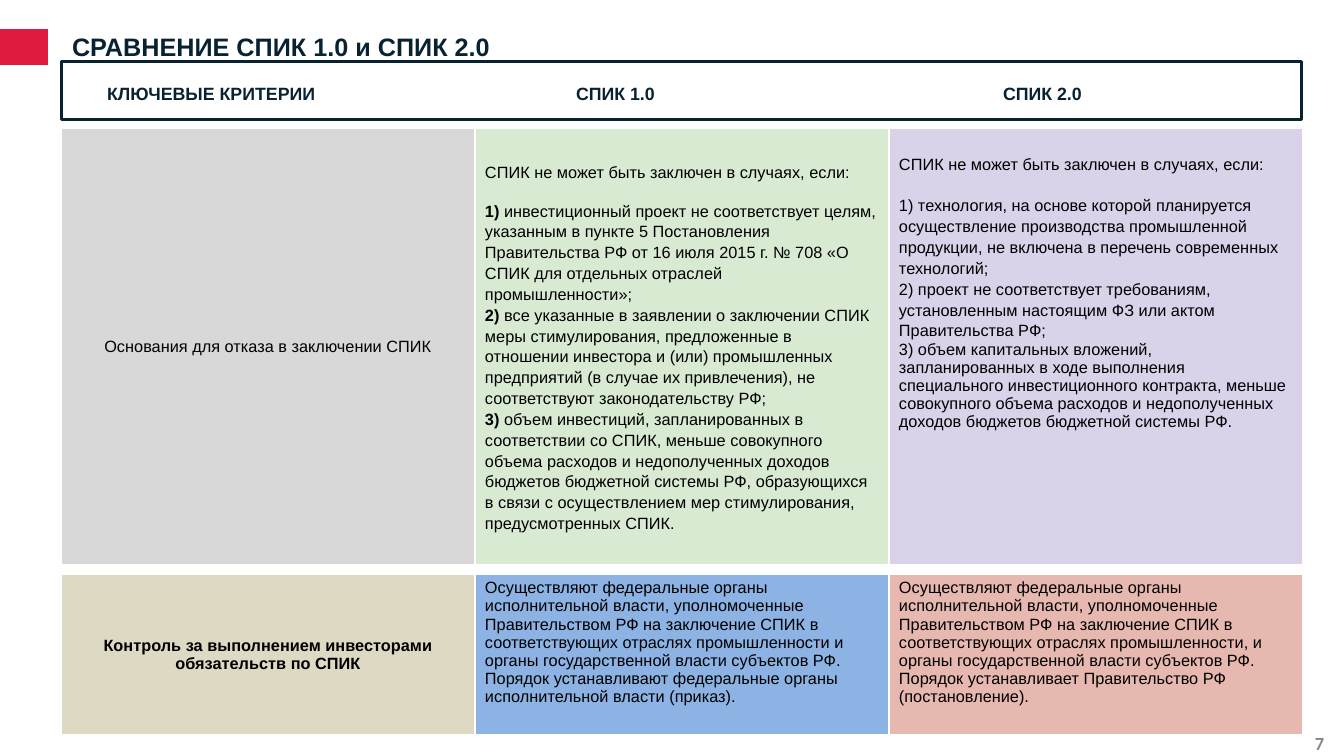
from lxml import etree
from pptx import Presentation
from pptx.dml.color import RGBColor
from pptx.enum.shapes import MSO_SHAPE
from pptx.enum.text import MSO_ANCHOR, MSO_AUTO_SIZE, PP_ALIGN
from pptx.oxml.ns import qn
from pptx.util import Pt

RECTANGLE = MSO_SHAPE.RECTANGLE
TOP, MIDDLE = MSO_ANCHOR.TOP, MSO_ANCHOR.MIDDLE
LEFT, CENTER = PP_ALIGN.LEFT, PP_ALIGN.CENTER
NO_AUTOFIT = MSO_AUTO_SIZE.NONE

PX = 8572.5  # EMU in one px
TITLE_ONLY = 5
TABLE_LEFT, COLUMN_WIDTH = 61, 414

COLORS = {
    "navy": "092231", "red": "DF1C40", "number": "888888",
    "black": "000000", "white": "FFFFFF",
    "gray": "D8D8D8", "green": "D9EAD3", "violet": "D9D2E9",
    "sand": "DDD9C3", "blue": "8CB3E3", "rose": "E6B8AF",
}
TITLE_FONT = {"name": "Arial", "size": Pt(17), "bold": True}
HEADER_FONT = {"name": "Arial", "size": Pt(12), "bold": True}
NUMBER_FONT = {"name": "Calibri", "size": Pt(12.5), "bold": True}
BODY_FONT = {"name": "Arial", "size": Pt(11), "bold": False}
LOOSE = {"line_spacing": 1.15}
LOOSE_GAP = {"line_spacing": 1.15, "space_before": Pt(12)}
CENTERED = {"alignment": CENTER}

# A paragraph is (format, bold start, plain text)
REFUSAL_CELLS = [
    {"fill": "gray", "anchor": MIDDLE, "paragraphs": [
        (CENTERED, "", "Основания для отказа в заключении СПИК")]},
    {"fill": "green", "anchor": MIDDLE, "paragraphs": [
        (LOOSE_GAP, "", "СПИК не может быть заключен в случаях, если:"),
        (LOOSE_GAP, "1) ", "инвестиционный проект не соответствует целям, "
         "указанным в пункте 5 Постановления"),
        (LOOSE, "", "Правительства РФ от 16 июля 2015 г. № 708 «О СПИК для "
         "отдельных отраслей"),
        (LOOSE, "", "промышленности»;"),
        (LOOSE, "2) ", "все указанные в заявлении о заключении СПИК меры "
         "стимулирования, предложенные в отношении инвестора и (или) "
         "промышленных предприятий (в случае их привлечения), не "
         "соответствуют законодательству РФ;"),
        (LOOSE, "3) ", "объем инвестиций, запланированных в соответствии со "
         "СПИК, меньше совокупного объема расходов и недополученных доходов "
         "бюджетов бюджетной системы РФ, образующихся в связи с "
         "осуществлением мер стимулирования, предусмотренных СПИК.")]},
    {"fill": "violet", "anchor": TOP, "margin_top": 25, "paragraphs": [
        (LOOSE, "", "СПИК не может быть заключен в случаях, если:"),
        ({"line_spacing": 1.15, "space_before": Pt(14)}, "",
         "1) технология, на основе которой планируется осуществление "
         "производства промышленной продукции, не включена в перечень "
         "современных технологий;"),
        (LOOSE, "", "2) проект не соответствует требованиям, установленным "
         "настоящим ФЗ или актом Правительства РФ;"),
        ({}, "", "3) объем капитальных вложений, запланированных в ходе "
         "выполнения специального инвестиционного контракта, меньше "
         "совокупного объема расходов и недополученных доходов бюджетов "
         "бюджетной системы РФ.")]},
]
CONTROL_CELLS = [
    {"fill": "sand", "anchor": MIDDLE, "paragraphs": [
        (CENTERED, "Контроль за выполнением инвесторами обязательств по СПИК", "")]},
    {"fill": "blue", "anchor": TOP, "paragraphs": [
        ({}, "", "Осуществляют федеральные органы исполнительной власти, "
         "уполномоченные Правительством РФ на заключение СПИК в "
         "соответствующих отраслях промышленности и органы государственной "
         "власти субъектов РФ. Порядок устанавливают федеральные органы "
         "исполнительной власти (приказ).")]},
    {"fill": "rose", "anchor": TOP, "paragraphs": [
        ({}, "", "Осуществляют федеральные органы исполнительной власти, "
         "уполномоченные Правительством РФ на заключение СПИК в "
         "соответствующих отраслях промышленности, и органы государственной "
         "власти субъектов РФ."),
        ({}, "", "Порядок устанавливает Правительство РФ (постановление).")]},
]


def px(value):
    return round(value * PX)


def color(name):
    return RGBColor.from_string(COLORS[name])


def set_attributes(target, values):
    for name, value in values.items():
        setattr(target, name, value)


def add_run(paragraph, text, font, color_name):
    run = paragraph.add_run()
    run.text = text
    set_attributes(run.font, font)
    run.font.color.rgb = color(color_name)


def write_line(shape, text, font, color_name, margins=(0, 0), anchor=TOP):
    """Write one left-aligned paragraph; margins are left and top."""
    frame = shape.text_frame
    set_attributes(frame, {
        "word_wrap": True, "auto_size": NO_AUTOFIT, "vertical_anchor": anchor,
        "margin_left": px(margins[0]), "margin_top": px(margins[1]),
        "margin_right": 0, "margin_bottom": 0,
    })
    paragraph = frame.paragraphs[0]
    paragraph.alignment = LEFT
    add_run(paragraph, text, font, color_name)
    return paragraph


def add_box(slide, left, top, width, height):
    shape = slide.shapes.add_shape(RECTANGLE, px(left), px(top), px(width), px(height))
    shape.shadow.inherit = False
    return shape


def add_title(slide, text):
    title = slide.shapes.title
    set_attributes(title, {"left": px(70), "top": px(29),
                           "width": px(445), "height": px(33)})
    write_line(title, text, TITLE_FONT, "navy", (2, 1), MIDDLE)


def add_marker(slide):
    marker = add_box(slide, -3, 29, 51, 36)
    marker.fill.solid()
    marker.fill.fore_color.rgb = color("red")
    marker.line.fill.background()


def add_header(slide, labels, tab_positions):
    header = add_box(slide, TABLE_LEFT, 62, 3 * COLUMN_WIDTH - 1, 58)
    header.fill.background()
    header.line.color.rgb = color("navy")
    header.line.width = Pt(2.04)
    paragraph = write_line(header, "\t".join(labels), HEADER_FONT, "navy", (46, 4), MIDDLE)
    # Tab stops hold the column labels in place
    properties = paragraph._p.get_or_add_pPr()
    tabs = etree.SubElement(properties, qn("a:tabLst"))
    for position in tab_positions:
        etree.SubElement(tabs, qn("a:tab"), pos=str(px(position)), algn="l")


def set_borders(cell):
    properties = cell._tc.get_or_add_tcPr()
    widths = {"a:lnL": 1, "a:lnR": 1, "a:lnT": 1, "a:lnB": 3}
    for index, (tag, width) in enumerate(widths.items()):
        line = etree.Element(qn(tag), w=str(Pt(width)))
        fill = etree.SubElement(line, qn("a:solidFill"))
        etree.SubElement(fill, qn("a:srgbClr"), val=COLORS["white"])
        properties.insert(index, line)


def fill_cell(cell, content):
    cell.fill.solid()
    cell.fill.fore_color.rgb = color(content["fill"])
    set_attributes(cell, {
        "vertical_anchor": content["anchor"],
        "margin_left": px(10), "margin_right": px(10),
        "margin_top": px(content.get("margin_top", 5)), "margin_bottom": px(5),
    })
    set_borders(cell)
    frame = cell.text_frame
    for index, (layout, bold_start, text) in enumerate(content["paragraphs"]):
        paragraph = frame.add_paragraph() if index else frame.paragraphs[0]
        set_attributes(paragraph, layout)
        if bold_start:
            add_run(paragraph, bold_start, {**BODY_FONT, "bold": True}, "black")
        if text:
            add_run(paragraph, text, BODY_FONT, "black")


def add_row_table(slide, top, height, contents):
    table = slide.shapes.add_table(
        1, len(contents), px(TABLE_LEFT), px(top),
        px(COLUMN_WIDTH * len(contents)), px(height)).table
    set_attributes(table, {"first_row": False, "horz_banding": False})
    for cell, content in zip(table.rows[0].cells, contents):
        fill_cell(cell, content)


def add_page_number(slide, text):
    box = slide.shapes.add_textbox(px(1312), px(730), px(26), px(21))
    write_line(box, text, NUMBER_FONT, "number", (3, 0)).line_spacing = 1.09


def main():
    presentation = Presentation()
    presentation.slide_width, presentation.slide_height = px(1344), px(756)
    slide = presentation.slides.add_slide(presentation.slide_layouts[TITLE_ONLY])

    # Heading
    add_header(slide, ["КЛЮЧЕВЫЕ КРИТЕРИИ", "СПИК 1.0", "СПИК 2.0"], [469, 896])
    add_title(slide, "СРАВНЕНИЕ СПИК 1.0 и СПИК 2.0")
    add_marker(slide)
    add_page_number(slide, "7")

    # Comparison
    add_row_table(slide, 128, 438, REFUSAL_CELLS)
    add_row_table(slide, 574, 162, CONTROL_CELLS)
    presentation.save("out.pptx")


if __name__ == "__main__":
    main()
